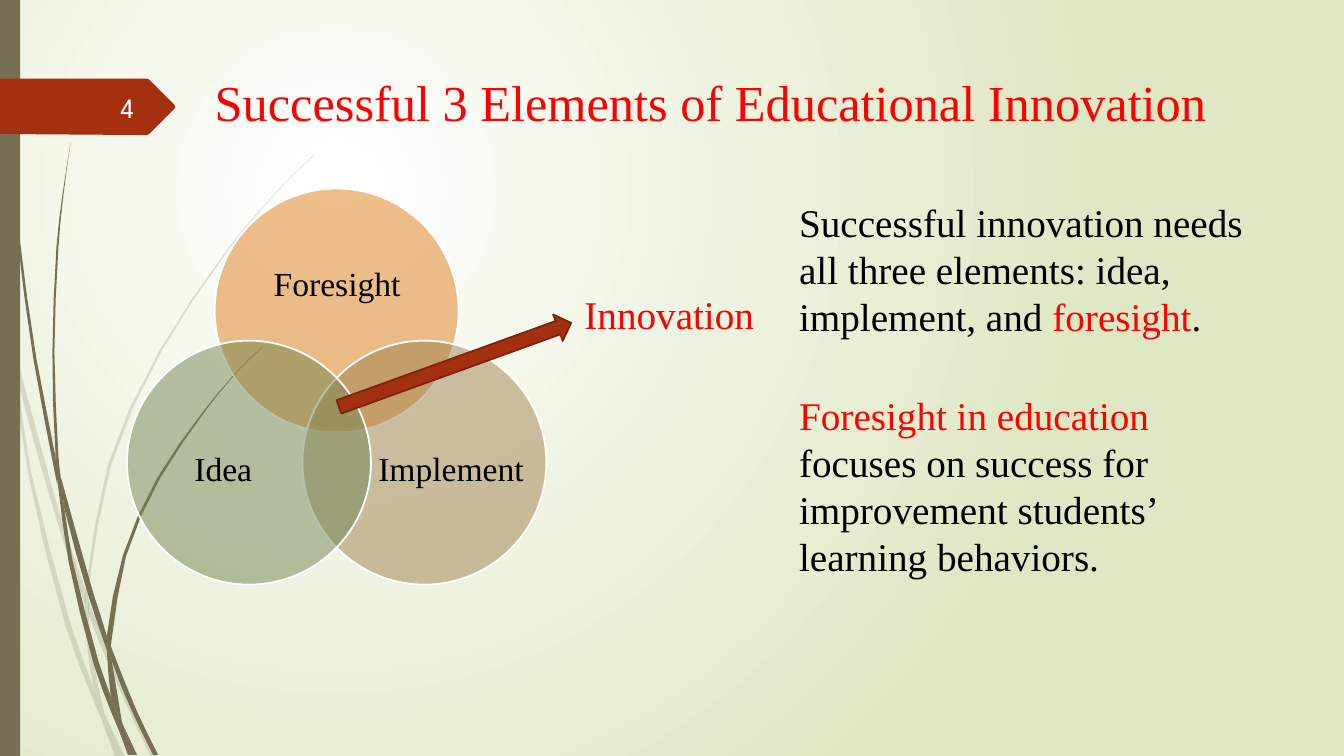
from dataclasses import dataclass
from lxml import etree
from pptx import Presentation
from pptx.dml.color import RGBColor
from pptx.enum.shapes import MSO_SHAPE
from pptx.enum.text import MSO_ANCHOR, MSO_AUTO_SIZE, PP_ALIGN
from pptx.oxml.ns import qn
from pptx.util import Pt

PX = 9144
OVAL, RECT, ARROW = MSO_SHAPE.OVAL, MSO_SHAPE.RECTANGLE, MSO_SHAPE.RIGHT_ARROW
LEFT, MID, RIGHT = PP_ALIGN.LEFT, PP_ALIGN.CENTER, PP_ALIGN.RIGHT
TOP, CENTER = MSO_ANCHOR.TOP, MSO_ANCHOR.MIDDLE


@dataclass(frozen=True)
class Theme:
    serif: str = "Times New Roman"
    sans: str = "League Spartan"
    head: int = 36
    body: int = 28
    label: int = 24
    page: int = 20
    red: str = "FF0000"
    black: str = "000000"
    white: str = "FFFFFF"
    light: str = "FEFFFF"
    lime: str = "DFE8C4"
    stem: str = "766F54"
    rust: str = "A53010"
    edge: str = "7A240C"
    orange: str = "DE7E18"
    tan: str = "9F8351"
    green: str = "728653"


T = Theme()

TITLE = "Successful 3 Elements of Educational Innovation"
SIZE = 242
CIRCLES = [
    ("Foresight", T.orange, (213, 187), (246, 229, 177, 109)),
    ("Implement", T.tan, (300, 338), (375, 400, 145, 133)),
    ("Idea", T.green, (126, 338), (149, 400, 145, 133)),
]
NOTES = [
    ((570, 283, 240, 57), [("Innovation", T.red)]),
    ((783, 192, 467, 151), [
        ("Successful innovation needs all three elements: idea, implement, and ", T.black),
        ("foresight", T.red), (".", T.black)]),
    ((783, 383, 476, 199), [
        ("Foresight in education ", T.red),
        ("focuses on success for improvement students’ learning behaviors.", T.black)]),
]
PALE = [
    ([(0, 282), (9, 322), (11, 350)], [(0, 299), (10, 344), (11, 350)]),
    ([(14, 345), (17, 376), (58, 522), (84, 599)],
     [(14, 345), (62, 520), (85, 586), (84, 599)]),
    ([(88, 596), (88, 610), (123, 694), (150, 751)],
     [(88, 596), (92, 607), (127, 692), (155, 751)]),
    ([(105, 711), (119, 751)], [(105, 711), (124, 751)]),
    ([(11, 350), (28, 470), (65, 621), (92, 693), (101, 714)],
     [(11, 350), (17, 376), (31, 469), (70, 619), (93, 683), (99, 707), (101, 714)]),
    ([(84, 599), (87, 646), (93, 683), (96, 692), (105, 711)],
     [(84, 599), (88, 608), (88, 610), (91, 646), (103, 706), (105, 711)]),
    ([(312, 153), (289, 175), (268, 197), (228, 244), (158, 348), (107, 461),
      (85, 584), (85, 586), (88, 596)],
     [(312, 154), (290, 175), (268, 198), (229, 245), (160, 349), (110, 462),
      (88, 584), (88, 596)]),
    ([(101, 714), (114, 751)], [(101, 714), (119, 751)]),
    ([(85, 586), (84, 599), (88, 608), (88, 610)], [(85, 586), (88, 596), (88, 610)]),
    ([(93, 683), (99, 707), (101, 714), (119, 751)],
     [(93, 683), (96, 692), (105, 711), (119, 751)]),
]
DARK = [
    ([(3, 0), (4, 48), (7, 110), (17, 233), (33, 355), (56, 477), (57, 481)],
     [(4, 0), (5, 48), (8, 109), (19, 232), (36, 355), (55, 453), (57, 481)]),
    ([(60, 472), (64, 505), (88, 592), (106, 645)],
     [(60, 472), (93, 590), (106, 631), (106, 645)]),
    ([(110, 641), (111, 656), (132, 708), (152, 749)],
     [(110, 641), (113, 649), (136, 706), (157, 749)]),
    ([(57, 477), (68, 557), (93, 659), (111, 708), (117, 722)],
     [(57, 477), (64, 505), (72, 556), (98, 657), (110, 691), (116, 717), (117, 722)]),
    ([(70, 141), (62, 193), (56, 245), (52, 349), (55, 449), (60, 472)],
     [(70, 141), (63, 193), (58, 245), (54, 349), (58, 453), (60, 472)]),
    ([(122, 719), (133, 749)], [(122, 719), (136, 749)]),
    ([(55, 449), (55, 453), (57, 477), (64, 505)], [(55, 449), (60, 472), (64, 505)]),
    ([(260, 344), (245, 358), (231, 373), (204, 405), (156, 474), (122, 551),
      (106, 631), (110, 641)],
     [(261, 344), (245, 359), (231, 374), (205, 406), (158, 476), (125, 552),
      (111, 633), (110, 641)]),
    ([(117, 722), (127, 749)], [(117, 722), (131, 749)]),
    ([(106, 645), (110, 691), (116, 706), (122, 719)],
     [(106, 645), (109, 651), (111, 656), (121, 716), (122, 719)]),
    ([(106, 631), (106, 645), (109, 651), (111, 656)],
     [(106, 631), (110, 641), (111, 656)]),
    ([(110, 691), (116, 717), (117, 722), (130, 749)],
     [(110, 691), (116, 706), (122, 719), (133, 749)]),
]
BANNER = [(0, 78), (146, 78), (148, 79), (173, 104), (174, 106), (173, 108),
          (148, 133), (146, 134), (136, 134), (0, 133)]


def emu(box):
    return [round(v * PX) for v in box]


def rgb(tone):
    return RGBColor.from_string(tone)


def paint(shape, tone, alpha=100, line=None):
    shape.shadow.inherit = False
    shape.fill.solid()
    shape.fill.fore_color.rgb = rgb(tone)
    if alpha < 100:
        node = next(shape.fill._xPr.iter(qn("a:srgbClr")))
        etree.SubElement(node, qn("a:alpha")).set("val", str(alpha * 1000))
    if line:
        shape.line.color.rgb = rgb(line)
        shape.line.width = Pt(1.25)
    else:
        shape.line.fill.background()
    return shape


def smooth(pts):
    last = len(pts) - 1
    slopes = []
    for i in range(last + 1):
        (xa, ya), (xb, yb) = pts[max(i - 1, 0)], pts[min(i + 1, last)]
        slopes.append((xb - xa) / (yb - ya))
    curve = [pts[0]]
    for i in range(last):
        (xa, ya), (xb, yb) = pts[i], pts[i + 1]
        bend = (yb - ya) * (slopes[i] - slopes[i + 1]) / 8
        curve += [((xa + xb) / 2 + bend, (ya + yb) / 2), (xb, yb)]
    return curve


def outline(shapes, pts, tone, alpha=100):
    pts = [tuple(emu(p)) for p in pts]
    form = shapes.build_freeform(*pts[0])
    form.add_line_segments(pts[1:], close=True)
    paint(form.convert_to_shape(), tone, alpha)


def write(shape, runs, size, face=T.serif, align=LEFT, anchor=TOP):
    frame = shape.text_frame
    frame.word_wrap = True
    frame.auto_size = MSO_AUTO_SIZE.NONE
    frame.vertical_anchor = anchor
    para = frame.paragraphs[0]
    para.alignment = align
    para.font.size, para.font.name = Pt(size), face
    for text, tone in runs:
        run = para.add_run()
        run.text = text
        run.font.color.rgb = rgb(tone)
    return frame


def backdrop(slide):
    fill = slide.background.fill
    fill.gradient()
    for stop, tone in zip(fill.gradient_stops, (T.white, T.lime)):
        stop.color.rgb = rgb(tone)
    grad = next(slide.element.iter(qn("a:gradFill")))
    grad.remove(grad.find(qn("a:lin")))
    ring = etree.SubElement(grad, qn("a:path"))
    ring.set("path", "circle")
    rect = etree.SubElement(ring, qn("a:fillToRect"))
    for side, val in zip("ltrb", (50, 50, 100, 100)):
        rect.set(side, str(val * 1000))


def main():
    deck = Presentation()
    deck.slide_width, deck.slide_height = emu((1333.33, 750))
    slide = deck.slides.add_slide(deck.slide_layouts[5])
    shapes = slide.shapes
    backdrop(slide)

    for blades, alpha in ((PALE, 20), (DARK, 100)):
        for left, right in blades:
            ring = smooth(left) + smooth(right)[::-1]
            outline(shapes, list(dict.fromkeys(ring)), T.stem, alpha)
    paint(shapes.add_shape(RECT, *emu((0, 0, 20, 750))), T.stem)
    outline(shapes, BANNER, T.rust)

    title = shapes.title
    title.left, title.top, title.width, title.height = emu((203, 66, 1074, 71))
    write(title, [(TITLE, T.red)], T.head)

    for name, tone, spot, box in CIRCLES:
        paint(shapes.add_shape(OVAL, *emu((*spot, SIZE, SIZE))), tone, 50, T.white)
        frame = write(shapes.add_textbox(*emu(box)), [(name, T.black)], T.label,
                      align=MID, anchor=CENTER)
        frame.margin_left = frame.margin_right = frame.margin_top = frame.margin_bottom = 0
        frame.paragraphs[0].line_spacing = 0.9

    arrow = paint(shapes.add_shape(ARROW, *emu((329, 348, 245, 28))), T.rust, line=T.edge)
    arrow.rotation = 340.1

    for box, runs in NOTES:
        write(shapes.add_textbox(*emu(box)), runs, T.body)
    write(shapes.add_textbox(*emu((58, 86, 85, 40))), [("4", T.light)], T.page,
          T.sans, RIGHT, CENTER)
    deck.save("out.pptx")


if __name__ == "__main__":
    main()
